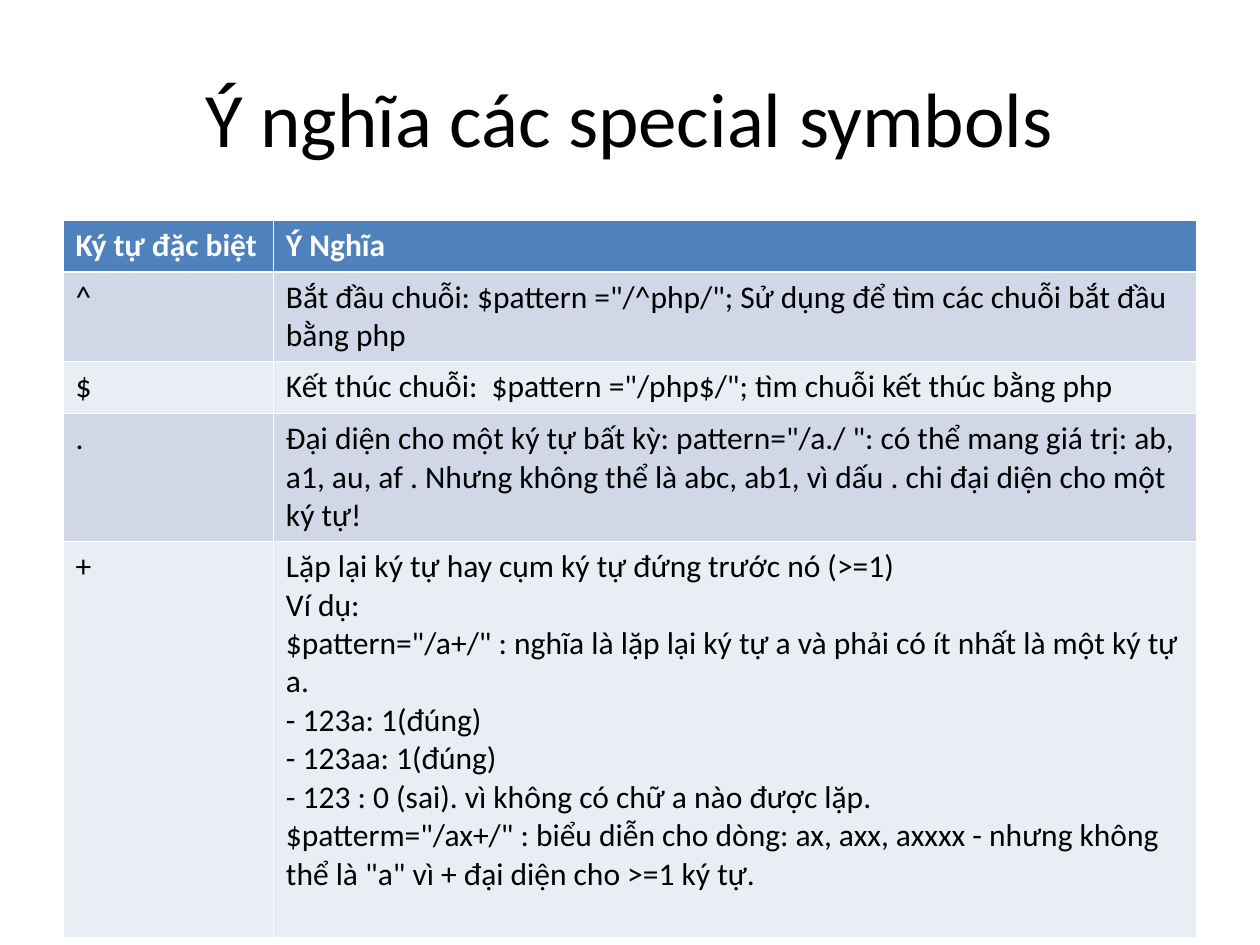
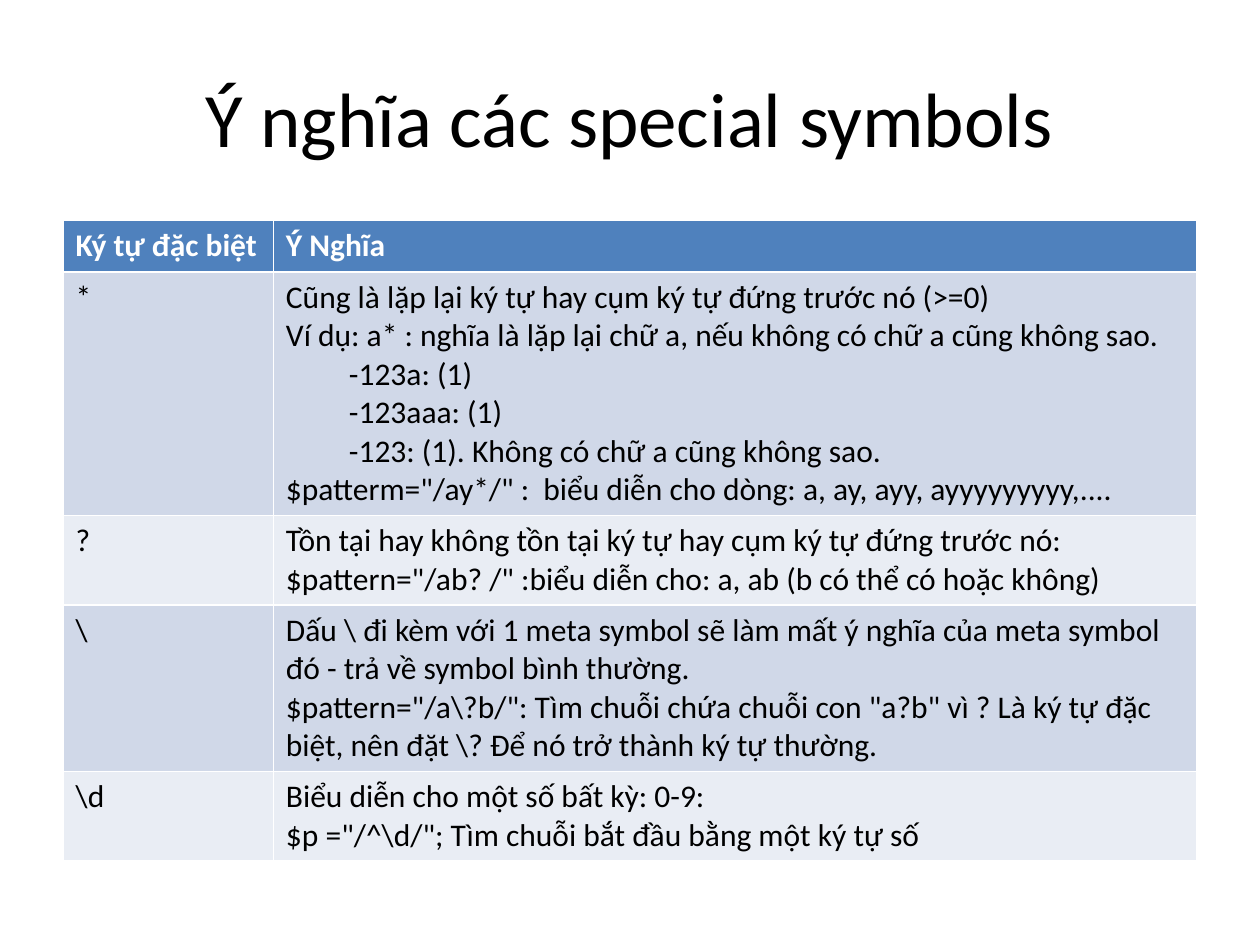
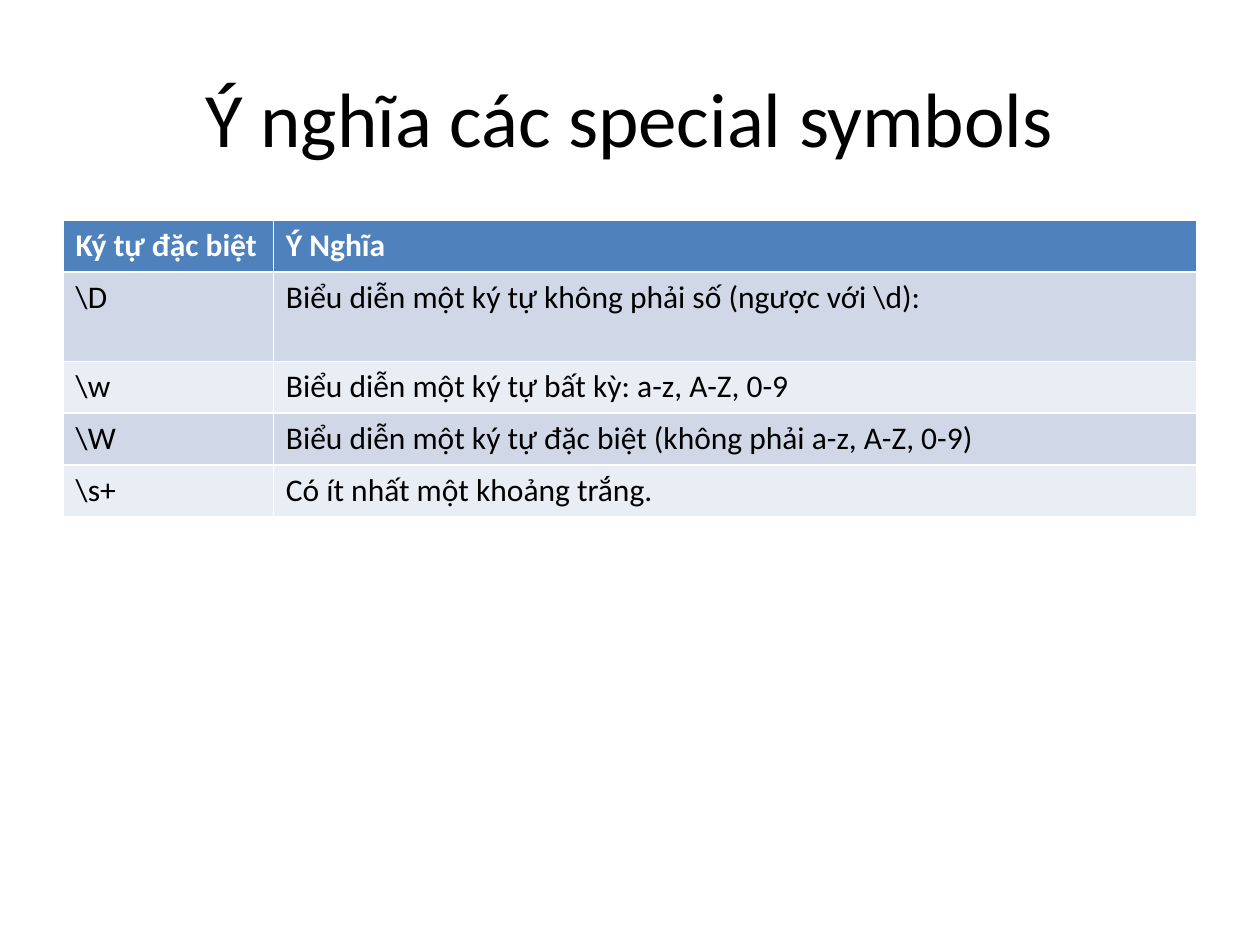
from pptx import Presentation
from pptx.dml.color import RGBColor
from pptx.enum.text import MSO_ANCHOR, PP_ALIGN
from pptx.util import Inches, Pt

CENTER = PP_ALIGN.CENTER
MIDDLE = MSO_ANCHOR.MIDDLE

BLACK = RGBColor(0x00, 0x00, 0x00)
WHITE = RGBColor(0xFF, 0xFF, 0xFF)
HEADER_BLUE = RGBColor(0x4F, 0x81, 0xBD)
BANDS = (RGBColor(0xD0, 0xD8, 0xE8), RGBColor(0xE9, 0xED, 0xF4))

FONT = "Calibri"
TITLE_ONLY = 5
TITLE = "Ý nghĩa các special symbols"
HEADINGS = ("Ký tự đặc biệt", "Ý Nghĩa")

TITLE_BOX = (0.5, 0.3, 9, 1.25)
TABLE_BOX = (0.5, 1.75, 9)
SYMBOL_WIDTH = 1.67
ROW_HEIGHT = 0.41

# Each row: symbol, meaning, least height in inches.
# In a meaning, \n starts a paragraph and \v breaks a line.
ANCHOR_ROWS = [
    ("^", 'Bắt đầu chuỗi: $pattern ="/^php/"; Sử dụng để tìm các chuỗi bắt đầu bằng php', 0.71),
    ("$", 'Kết thúc chuỗi:  $pattern ="/php$/"; tìm chuỗi kết thúc bằng php', ROW_HEIGHT),
    (".", 'Đại diện cho một ký tự bất kỳ: pattern="/a./ ": có thể mang giá trị: ab, a1, au, af . '
          "Nhưng không thể là abc, ab1, vì dấu . chi đại diện cho một ký tự!", 1.01),
    ("+", "Lặp lại ký tự hay cụm ký tự đứng trước nó (>=1)\n"
          "Ví dụ:\n"
          '$pattern="/a+/" : nghĩa là lặp lại ký tự a và phải có ít nhất là một ký tự a.\n'
          "- 123a: 1(đúng)\n"
          "- 123aa: 1(đúng)\n"
          "- 123 : 0 (sai). vì không có chữ a nào được lặp.\n"
          '$patterm="/ax+/" : biểu diễn cho dòng: ax, axx, axxxx - nhưng không thể là "a" '
          "vì + đại diện cho >=1 ký tự.", 3.15),
]
REPEAT_ROWS = [
    ("*", "Cũng là lặp lại ký tự hay cụm ký tự đứng trước nó (>=0)\v"
          "Ví dụ: a* : nghĩa là lặp lại chữ a, nếu không có chữ a cũng không sao.\v"
          "\t-123a: (1)\v"
          "\t-123aaa: (1)\v"
          "\t-123: (1). Không có chữ a cũng không sao.\n"
          '$patterm="/ay*/" :  biểu diễn cho dòng: a, ay, ayy, ayyyyyyyyy,....', 1.93),
    ("?", "Tồn tại hay không tồn tại ký tự hay cụm ký tự đứng trước nó:\n"
          '$pattern="/ab? /" :biểu diễn cho: a, ab (b có thể có hoặc không)', 0.71),
    ("\\", "Dấu \\ đi kèm với 1 meta symbol sẽ làm mất ý nghĩa của meta symbol đó - "
           "trả về symbol bình thường.\n"
           '$pattern="/a\\?b/": Tìm chuỗi chứa chuỗi con "a?b" vì ? Là ký tự đặc biệt, '
           "nên đặt \\? Để nó trở thành ký tự thường.", 1.32),
    (r"\d", "Biểu diễn cho một số bất kỳ: 0-9:\n"
            '$p ="/^\\d/"; Tìm chuỗi bắt đầu bằng một ký tự số', 0.71),
]
CLASS_ROWS = [
    (r"\D", r"Biểu diễn một ký tự không phải số (ngược với \d):", 0.71),
    (r"\w", "Biểu diễn một ký tự bất kỳ: a-z, A-Z, 0-9", ROW_HEIGHT),
    (r"\W", "Biểu diễn một ký tự đặc biệt (không phải a-z, A-Z, 0-9)", ROW_HEIGHT),
    (r"\s+", "Có ít nhất một khoảng trắng.", ROW_HEIGHT),
]


def style_text(frame, size, color, bold=False):
    for para in frame.paragraphs:
        para.font.name = FONT
        para.font.size = Pt(size)
        para.font.color.rgb = color
        para.font.bold = bold


def place_title(page, box):
    title = page.shapes.title
    title.left, title.top, title.width, title.height = map(Inches, box)
    frame = title.text_frame
    frame.text = TITLE
    frame.vertical_anchor = MIDDLE
    frame.paragraphs[0].alignment = CENTER
    style_text(frame, 44, BLACK)


def place_symbol_table(page, box, symbol_rows):
    left, top, width = box
    rows = [(*HEADINGS, ROW_HEIGHT), *symbol_rows]
    height = sum(row[-1] for row in rows)
    table = page.shapes.add_table(
        len(rows), len(HEADINGS), Inches(left), Inches(top), Inches(width), Inches(height)
    ).table
    table.columns[0].width = Inches(SYMBOL_WIDTH)
    table.columns[1].width = Inches(width - SYMBOL_WIDTH)

    for index, (*texts, row_height) in enumerate(rows):
        is_header = index == 0
        table.rows[index].height = Inches(row_height)
        for column, text in enumerate(texts):
            cell = table.cell(index, column)
            cell.text_frame.text = text
            cell.fill.solid()
            cell.fill.fore_color.rgb = HEADER_BLUE if is_header else BANDS[(index - 1) % 2]
            style_text(cell.text_frame, 18, WHITE if is_header else BLACK, is_header)


def main():
    deck = Presentation()
    deck.slide_width, deck.slide_height = Inches(10), Inches(7.5)
    for symbol_rows in (ANCHOR_ROWS, REPEAT_ROWS, CLASS_ROWS):
        page = deck.slides.add_slide(deck.slide_layouts[TITLE_ONLY])
        place_title(page, TITLE_BOX)
        place_symbol_table(page, TABLE_BOX, symbol_rows)
    deck.save("out.pptx")


if __name__ == "__main__":
    main()
